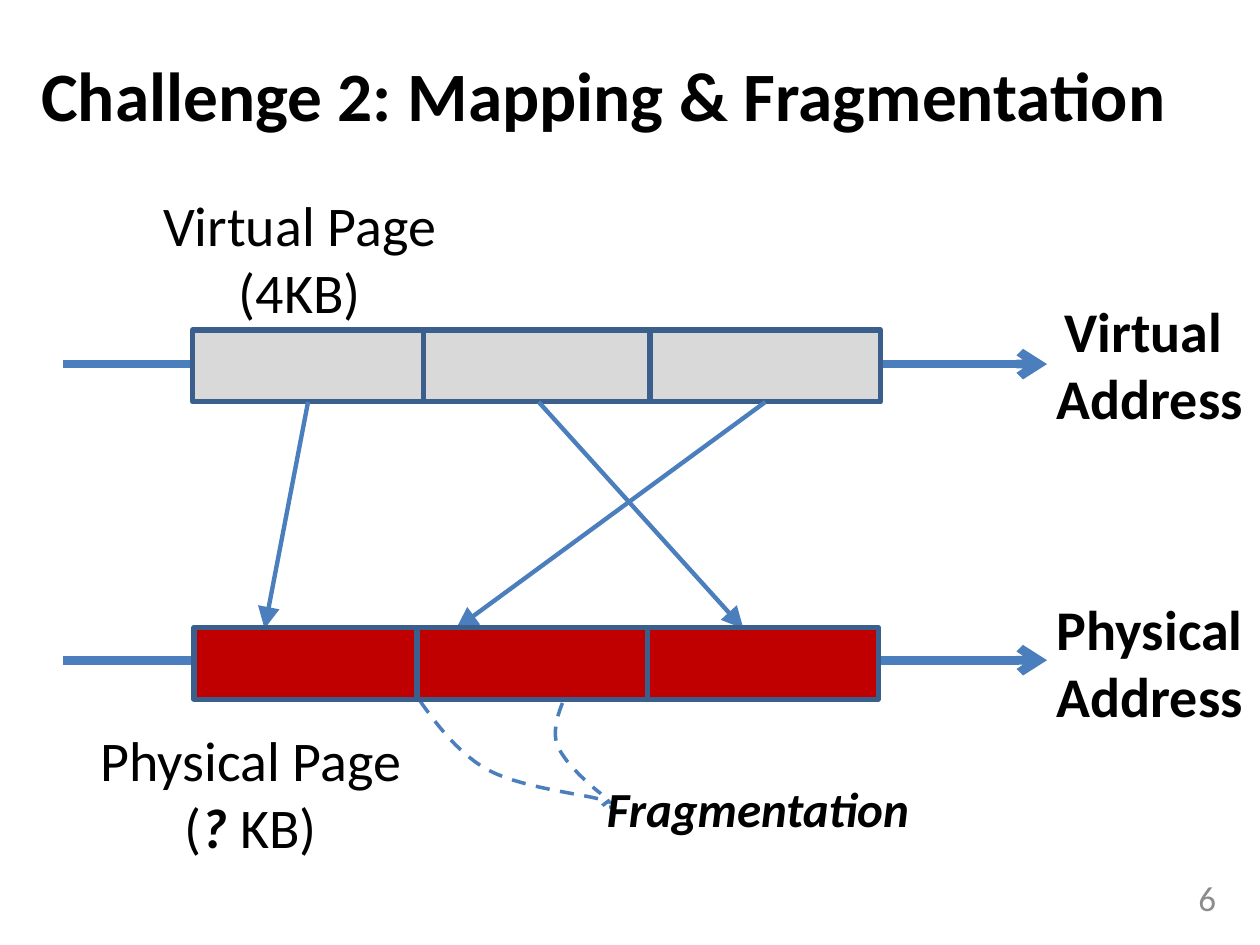
from lxml.etree import SubElement
from pptx import Presentation
from pptx.dml.color import RGBColor
from pptx.enum.dml import MSO_LINE
from pptx.enum.shapes import MSO_CONNECTOR, MSO_SHAPE
from pptx.enum.text import MSO_ANCHOR, PP_ALIGN
from pptx.oxml.ns import qn
from pptx.util import Inches, Pt

BLUE, OUTLINE, GRAY, RED = "4B7EBC", "3A5F8C", "D9D9D9", "C00000"
BOLD = {"bold": True}
BOLD_ITALIC = {"bold": True, "italic": True}


def color(value):
    return RGBColor.from_string(value)


def bezier(start, first, second, end, steps=16):
    for step in range(1, steps + 1):
        t = step / steps
        weights = ((1 - t) ** 3, 3 * t * (1 - t) ** 2, 3 * t * t * (1 - t), t ** 3)
        points = (start, first, second, end)
        yield tuple(sum(w * p[axis] for w, p in zip(weights, points)) for axis in (0, 1))


class SlideBuilder:
    font = "Calibri"

    def __init__(self, slide):
        self.slide = slide

    def style_line(self, line, value, width):
        line.color.rgb = color(value)
        line.width = Pt(width)

    def text(self, box, paragraphs, size, align=PP_ALIGN.CENTER,
             anchor=MSO_ANCHOR.TOP, value="000000"):
        shape = self.slide.shapes.add_textbox(*map(Inches, box))
        frame = shape.text_frame
        frame.word_wrap = True
        frame.vertical_anchor = anchor
        for index, runs in enumerate(paragraphs):
            paragraph = frame.paragraphs[0] if index == 0 else frame.add_paragraph()
            paragraph.alignment = align
            for content, extra in runs:
                run = paragraph.add_run()
                run.text = content
                run.font.color.rgb = color(value)
                formats = {"name": self.font, "size": Pt(size), **extra}
                for name, setting in formats.items():
                    setattr(run.font, name, setting)

    def page(self, left, top, fill):
        shape = self.slide.shapes.add_shape(
            MSO_SHAPE.RECTANGLE, *map(Inches, (left, top, 1.83, 0.57)))
        shape.shadow.inherit = False
        shape.fill.solid()
        shape.fill.fore_color.rgb = color(fill)
        self.style_line(shape.line, OUTLINE, 3)
        return shape

    def arrow(self, start, end, width, head, head_size="med", source=None):
        connector = self.slide.shapes.add_connector(
            MSO_CONNECTOR.STRAIGHT, *map(Inches, (*start, *end)))
        self.style_line(connector.line, BLUE, width)
        properties = connector.element.spPr
        SubElement(properties.find(qn("a:ln")), qn("a:tailEnd"),
                   type=head, w=head_size, len=head_size)
        SubElement(properties, qn("a:effectLst"))
        if source is not None:
            connector.begin_connect(source, 2)

    def dashed_curve(self, start, segments):
        points = []
        current = start
        for segment in segments:
            points.extend(bezier(current, *segment))
            current = segment[-1]
        builder = self.slide.shapes.build_freeform(*map(Inches, start))
        builder.add_line_segments([tuple(map(Inches, point)) for point in points], close=False)
        shape = builder.convert_to_shape()
        shape.shadow.inherit = False
        shape.fill.background()
        self.style_line(shape.line, BLUE, 2)
        shape.line.dash_style = MSO_LINE.DASH


def main():
    presentation = Presentation()
    presentation.slide_width = Inches(10)
    presentation.slide_height = Inches(7.5)
    builder = SlideBuilder(presentation.slides.add_slide(presentation.slide_layouts[6]))

    builder.text((0.23, 0.12, 9.5, 1.25),
                 [[("Challenge 2: Mapping & Fragmentation", BOLD)]], 39.6,
                 PP_ALIGN.LEFT, MSO_ANCHOR.MIDDLE)
    builder.text((7.42, 6.92, 2.33, 0.4), [[("6", {})]], 20,
                 PP_ALIGN.RIGHT, MSO_ANCHOR.MIDDLE, "8C8C8C")

    for axis_top in (2.89, 5.24):
        builder.arrow((0.5, axis_top), (8.31, axis_top), 5, "arrow")
    virtual_pages = [builder.page(left, 2.62, GRAY) for left in (1.53, 3.36, 5.16)]

    builder.text((0.96, 1.46, 2.94, 1.18),
                 [[("Virtual Page ", {})], [("(4KB) ", {})]], 32)
    builder.text((0.29, 5.71, 3.5, 1.18),
                 [[("Physical Page ", {})],
                  [("(", {}), ("? ", BOLD_ITALIC), ("KB) ", {})]], 32)

    for page, start, end in zip(virtual_pages, (2.45, 4.27, 6.08), (2.1, 5.9, 3.62)):
        builder.arrow((start, 3.19), (end, 4.99), 2.5, "triangle", "lg", page)

    builder.dashed_curve((4.64, 5.23), [
        ((4.52, 5.45), (4.39, 5.68), (4.41, 5.86)),
        ((4.43, 6.04), (4.77, 6.3), (4.77, 6.3))])
    builder.dashed_curve((3.12, 5.24), [
        ((3.33, 5.56), (3.53, 5.89), (3.82, 6.08)),
        ((4.1, 6.26), (4.66, 6.3), (4.82, 6.36)),
        ((4.98, 6.41), (4.77, 6.41), (4.77, 6.41)),
        ((4.77, 6.4), (4.8, 6.38), (4.84, 6.35))])
    builder.text((4.14, 6.13, 3.75, 0.57), [[("Fragmentation", BOLD_ITALIC)]], 28)

    for label, top in (("Virtual ", 2.3), ("Physical ", 4.67)):
        builder.text((8.25, top, 1.75, 1.18), [[(label, BOLD)], [("Address", BOLD)]], 32)
    for left in (1.54, 3.31, 5.14):
        builder.page(left, 4.98, RED)

    presentation.save("out.pptx")


if __name__ == "__main__":
    main()
